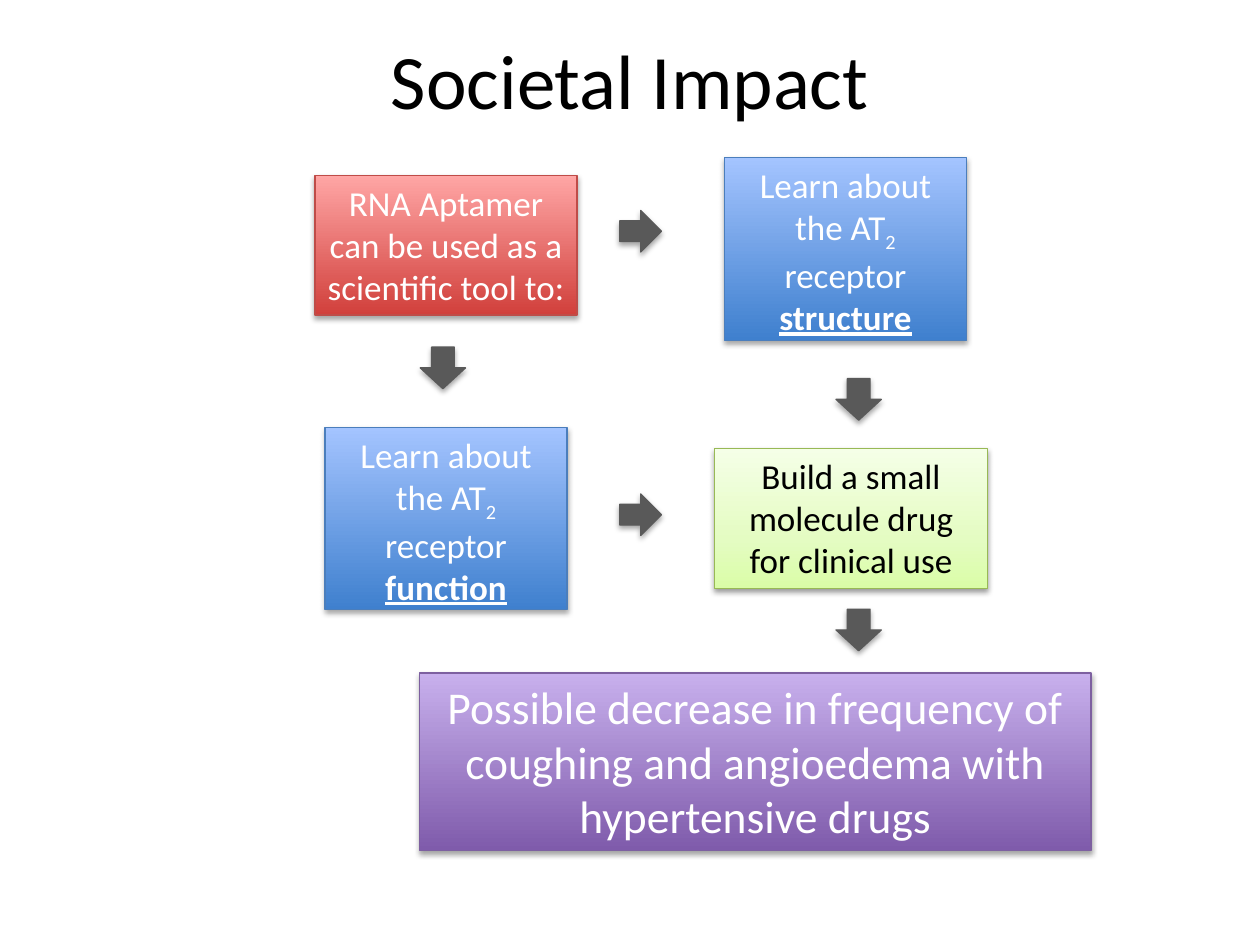
"""Build the Societal Impact flow slide."""
from copy import deepcopy

from lxml import etree
from pptx import Presentation
from pptx import util as u
from pptx.dml.color import RGBColor
from pptx.enum import shapes, text
from pptx.oxml import ns

FONT = "Calibri"
COLORS = {
    "black": "000000",
    "white": "FFFFFF",
    "arrow": "595959",
    "tool": "BF4C48",
    "learn": "4B7EBC",
    "build": "98B955",
    "outcome": "7D60A0",
}
GRADIENTS = {
    "tool": [(0, "D1403C"), (1, "FFA6A5")],
    "learn": [(0, "3F80CE"), (1, "A4C4FF")],
    "build": [(0, "DAFDA7"), (0.35, "E4FCC2"), (1, "F5FFE7")],
    "outcome": [(0, "7F5BAB"), (1, "C8B0ED")],
}
PLAIN, SUBSCRIPT, STRONG = "plain", "subscript", "strong"


def rgb(name):
    """Return the named colour."""
    return RGBColor.from_string(COLORS[name])


def add_shadow(shape, opacity=35, distance=1.8):
    """Give a shape a soft shadow straight below it."""
    shape.shadow.inherit = False
    effects = shape._element.spPr.find(ns.qn("a:effectLst"))
    shadow = etree.SubElement(
        effects, ns.qn("a:outerShdw"), blurRad=str(u.Pt(3.1)),
        dist=str(u.Pt(distance)), dir="5400000", rotWithShape="0")
    tint = etree.SubElement(shadow, ns.qn("a:srgbClr"), val=COLORS["black"])
    etree.SubElement(tint, ns.qn("a:alpha"), val=str(opacity * 1000))


def fill_gradient(shape, stops):
    """Fill a shape with a gradient that runs from bottom to top."""
    shape.fill.gradient()
    shape.fill.gradient_angle = 90
    stop_list = shape._element.spPr.find(".//" + ns.qn("a:gsLst"))
    for _ in stops[2:]:
        stop_list.append(deepcopy(stop_list[-1]))
    for stop, (position, color) in zip(shape.fill.gradient_stops, stops):
        stop.position = position
        stop.color.rgb = RGBColor.from_string(color)


def write(frame, runs, size, color):
    """Write one centred paragraph run by run."""
    frame.word_wrap = True
    paragraph = frame.paragraphs[0]
    paragraph.alignment = text.PP_ALIGN.CENTER
    for words, style in runs:
        run = paragraph.add_run()
        run.text = words
        run.font.name = FONT
        run.font.size = u.Pt(size)
        run.font.color.rgb = rgb(color)
        if style == SUBSCRIPT:
            run.font._element.set("baseline", "-25000")
        elif style == STRONG:
            run.font.bold = run.font.underline = True


def add_title(slide, words):
    """Add the slide heading."""
    title = slide.shapes.add_textbox(
        u.Inches(0.5), u.Inches(0), u.Inches(9), u.Inches(1.25))
    title.text_frame.vertical_anchor = text.MSO_ANCHOR.MIDDLE
    write(title.text_frame, [(words, PLAIN)], 44, "black")


def add_step(slide, bounds, theme, runs, size=20, color="white", **shadow):
    """Add one gradient box of the flow."""
    step = slide.shapes.add_shape(
        shapes.MSO_SHAPE.RECTANGLE, *map(u.Inches, bounds))
    fill_gradient(step, GRADIENTS[theme])
    step.line.color.rgb = rgb(theme)
    step.line.width = u.Pt(0.75)
    add_shadow(step, **shadow)
    step.text_frame.vertical_anchor = text.MSO_ANCHOR.TOP
    step.text_frame.auto_size = text.MSO_AUTO_SIZE.SHAPE_TO_FIT_TEXT
    write(step.text_frame, runs, size, color)


def add_learning(slide, left, top, subject):
    """Add a box about one aspect of the receptor."""
    runs = [("Learn about the AT", PLAIN), ("2", SUBSCRIPT),
            (" receptor ", PLAIN), (subject, STRONG)]
    add_step(slide, (left, top, 1.92, 1.45), "learn", runs)


def add_arrow(slide, left, top, height=0.33, rotation=0):
    """Add a block arrow between two steps."""
    arrow = slide.shapes.add_shape(
        shapes.MSO_SHAPE.RIGHT_ARROW,
        *map(u.Inches, (left, top, 0.33, height)))
    arrow.rotation = rotation
    arrow.fill.solid()
    arrow.fill.fore_color.rgb = rgb("arrow")
    arrow.line.color.rgb = rgb("arrow")
    arrow.line.width = u.Pt(0.75)
    add_shadow(arrow)


def main():
    """Build and save the slide."""
    deck = Presentation()
    deck.slide_width, deck.slide_height = u.Inches(10), u.Inches(7.5)
    slide = deck.slides.add_slide(deck.slide_layouts[6])

    add_title(slide, "Societal Impact")
    add_step(slide, (2.5, 1.39, 2.08, 1.11), "tool",
             [("RNA Aptamer can be used as a scientific tool to:", PLAIN)])
    add_learning(slide, 2.58, 3.39, "function")
    add_learning(slide, 5.75, 1.25, "structure")
    add_step(slide, (5.67, 3.56, 2.17, 1.11), "build",
             [("Build a small molecule drug for clinical use", PLAIN)],
             color="black", opacity=38, distance=1.6)
    add_step(slide, (3.33, 5.34, 5.33, 1.41), "outcome",
             [("Possible decrease in frequency of coughing and angioedema "
               "with hypertensive drugs", PLAIN)], size=26)

    for top in (1.67, 3.92):
        add_arrow(slide, 4.92, top)
    for left, top in ((3.35, 2.74), (6.65, 2.99), (6.65, 4.82)):
        add_arrow(slide, left, top, height=0.36, rotation=90)

    deck.save("out.pptx")


if __name__ == "__main__":
    main()
